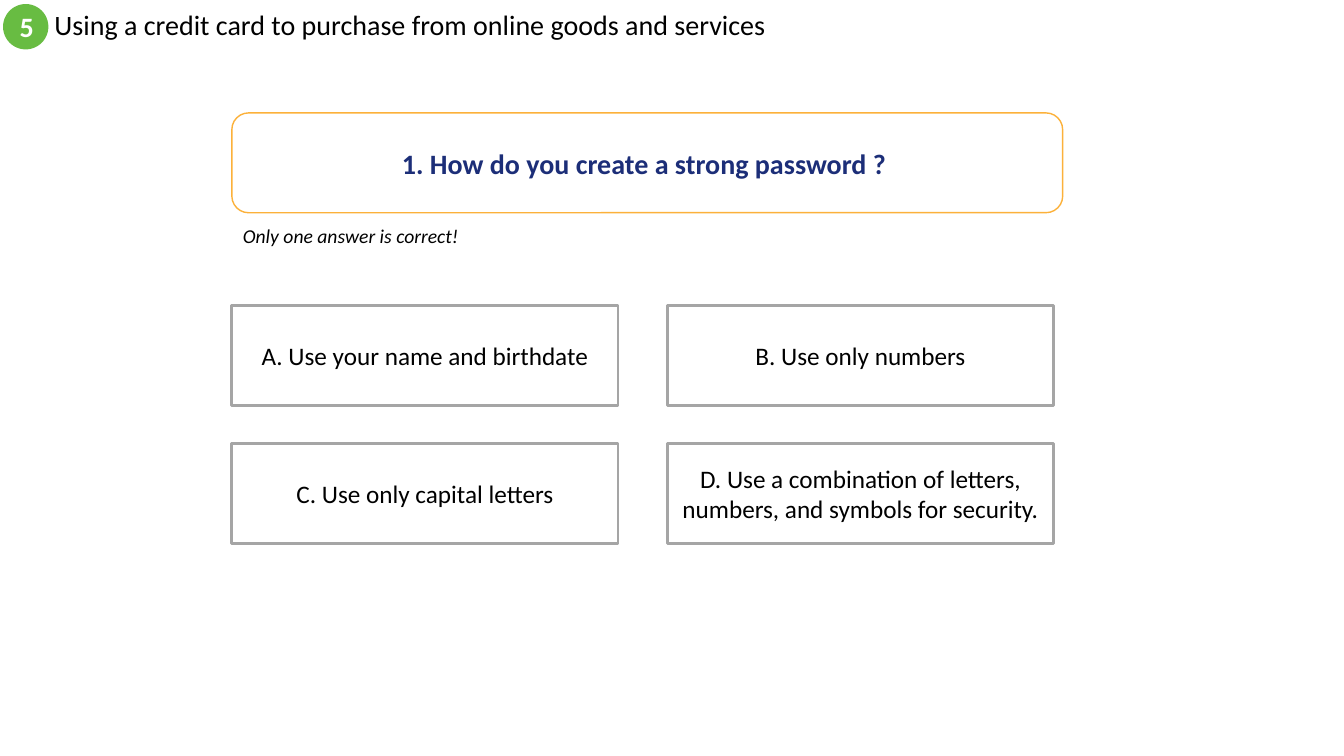
from dataclasses import dataclass

from pptx import Presentation
from pptx.dml.color import RGBColor
from pptx.enum.shapes import MSO_SHAPE
from pptx.enum.text import MSO_ANCHOR, MSO_AUTO_SIZE, PP_ALIGN
from pptx.util import Inches, Pt


@dataclass(frozen=True)
class Theme:
    font: str = "Calibri"
    black: RGBColor = RGBColor(0x00, 0x00, 0x00)
    white: RGBColor = RGBColor(0xFF, 0xFF, 0xFF)
    green: RGBColor = RGBColor(0x68, 0xBC, 0x42)
    orange: RGBColor = RGBColor(0xFC, 0xB1, 0x3A)
    navy: RGBColor = RGBColor(0x1C, 0x2E, 0x78)
    gray: RGBColor = RGBColor(0xA5, 0xA5, 0xA5)
    heading: Pt = Pt(20)
    answer: Pt = Pt(18)
    hint: Pt = Pt(14)


theme = Theme()


def write(part, text, size, color, align=PP_ALIGN.CENTER, anchor=MSO_ANCHOR.MIDDLE,
          bold=False, italic=False):
    frame = part.text_frame
    frame.word_wrap = True
    frame.auto_size = MSO_AUTO_SIZE.NONE
    frame.vertical_anchor = anchor
    paragraph = frame.paragraphs[0]
    paragraph.text = text
    paragraph.alignment = align
    font = paragraph.font
    font.name, font.size, font.bold, font.italic = theme.font, size, bold, italic
    font.color.rgb = color
    return paragraph


def add_box(kind, left, top, width, height, fill, line=None, line_width=0):
    box = slide.shapes.add_shape(kind, Inches(left), Inches(top), Inches(width), Inches(height))
    box.shadow.inherit = False
    box.fill.solid()
    box.fill.fore_color.rgb = fill
    if line is None:
        box.line.fill.background()
    else:
        box.line.color.rgb = line
        box.line.width = Pt(line_width)
    return box


prs = Presentation()
prs.slide_width, prs.slide_height = Inches(13.33), Inches(7.5)
slide = prs.slides.add_slide(prs.slide_layouts[5])

topic = slide.shapes.title
topic.left, topic.top = Inches(0.44), Inches(0.04)
topic.width, topic.height = Inches(8), Inches(0.45)
heading = write(topic, "Using a credit card to purchase from online goods and services",
                theme.heading, theme.black, PP_ALIGN.LEFT)
heading.line_spacing = 0.9

number = add_box(MSO_SHAPE.OVAL, 0.03, 0.04, 0.45, 0.45, theme.green)
write(number, "5", theme.heading, theme.white, bold=True)

question = add_box(MSO_SHAPE.ROUNDED_RECTANGLE, 2.3, 1.12, 8.24, 0.99,
                   theme.white, theme.orange, 1)
write(question, "1. How do you create a strong password ? ", theme.heading, theme.navy, bold=True)

hint = slide.shapes.add_textbox(Inches(2.31), Inches(2.17), Inches(2.36), Inches(0.34))
write(hint, "Only one answer is correct!", theme.hint, theme.black,
      PP_ALIGN.LEFT, MSO_ANCHOR.TOP, italic=True)
hint.text_frame.auto_size = MSO_AUTO_SIZE.SHAPE_TO_FIT_TEXT

answers = [
    "A. Use your name and birthdate",
    "B. Use only numbers",
    "C. Use only capital letters",
    "D. Use a combination of letters, numbers, and symbols for security.",
]
for index, answer in enumerate(answers):
    row, column = divmod(index, 2)
    choice = add_box(MSO_SHAPE.RECTANGLE, 2.3 + column * 4.32, 3.03 + row * 1.37, 3.83, 0.99,
                     theme.white, theme.gray, 2)
    write(choice, answer, theme.answer, theme.black)

prs.save("out.pptx")
